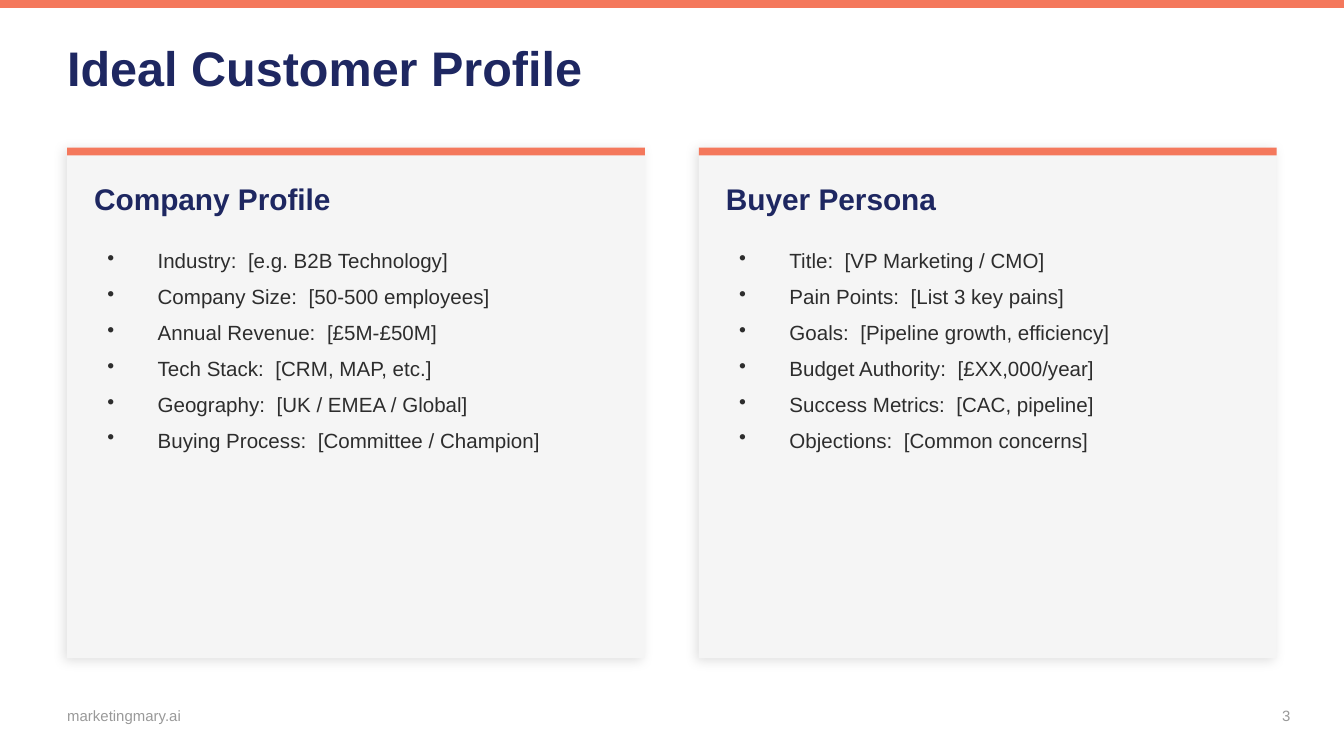
"""Build the Ideal Customer Profile slide with its two profile cards."""
from lxml.etree import SubElement
from pptx import Presentation
from pptx.dml.color import RGBColor
from pptx.enum.shapes import MSO_SHAPE
from pptx.enum.text import MSO_ANCHOR, PP_ALIGN
from pptx.oxml.ns import qn
from pptx.util import Cm, Pt

CORAL, NAVY, PANEL, INK, GREY = "F4785C", "1E2761", "F5F5F5", "2D2D2D", "999999"
CARD_TOP, CARD_WIDTH, CARD_HEIGHT = 2.79, 10.92, 9.65
BAR_HEIGHT, PADDING, INDENT = 0.15, 0.51, 0.95
CARDS = [
    (1.27, "Company Profile", [
        ("Industry:", "[e.g. B2B Technology]"),
        ("Company Size:", "[50-500 employees]"),
        ("Annual Revenue:", "[£5M-£50M]"),
        ("Tech Stack:", "[CRM, MAP, etc.]"),
        ("Geography:", "[UK / EMEA / Global]"),
        ("Buying Process:", "[Committee / Champion]"),
    ]),
    (13.21, "Buyer Persona", [
        ("Title:", "[VP Marketing / CMO]"),
        ("Pain Points:", "[List 3 key pains]"),
        ("Goals:", "[Pipeline growth, efficiency]"),
        ("Budget Authority:", "[£XX,000/year]"),
        ("Success Metrics:", "[CAC, pipeline]"),
        ("Objections:", "[Common concerns]"),
    ]),
]


def colour(value):
    return RGBColor.from_string(value)


def add_span(para, words, size, shade, bold=False):
    span = para.add_run()
    span.text = words
    span.font.name = "Arial"
    span.font.size = Pt(size)
    span.font.bold = bold
    span.font.color.rgb = colour(shade)
    return span


deck = Presentation()
deck.slide_width, deck.slide_height = Cm(25.4), Cm(14.29)
page = deck.slides.add_slide(deck.slide_layouts[6])
page.background.fill.solid()
page.background.fill.fore_color.rgb = colour("FFFFFF")

blocks = [(0, 0, 25.4, BAR_HEIGHT, CORAL)]
for left, heading, facts in CARDS:
    blocks.append((left, CARD_TOP, CARD_WIDTH, CARD_HEIGHT, PANEL))
    blocks.append((left, CARD_TOP, CARD_WIDTH, BAR_HEIGHT, CORAL))

for left, top, width, height, shade in blocks:
    block = page.shapes.add_shape(
        MSO_SHAPE.RECTANGLE, Cm(left), Cm(top), Cm(width), Cm(height))
    block.fill.solid()
    block.fill.fore_color.rgb = colour(shade)
    block.line.fill.background()
    block.shadow.inherit = False
    if shade == PANEL:
        effects = block._element.spPr.find(qn("a:effectLst"))
        shadow = SubElement(
            effects, qn("a:outerShdw"), blurRad=str(Pt(6)), dist=str(Pt(2)),
            dir=str(135 * 60000), algn="bl", rotWithShape="0")
        tint = SubElement(shadow, qn("a:srgbClr"), val="000000")
        SubElement(tint, qn("a:alpha"), val="12000")

labels = [(1.27, 0.51, 22.86, 1.52, "Ideal Customer Profile", 26, NAVY, PP_ALIGN.LEFT)]
for left, heading, facts in CARDS:
    labels.append((left + PADDING, 3.18, 9.91, 1.14, heading, 16, NAVY, PP_ALIGN.LEFT))
labels.append((1.02, 13.08, 5.08, 0.89, "marketingmary.ai", 8, GREY, PP_ALIGN.LEFT))
labels.append((23.37, 13.08, 1.27, 0.89, "3", 8, GREY, PP_ALIGN.RIGHT))

for left, top, width, height, words, size, shade, align in labels:
    box = page.shapes.add_textbox(Cm(left), Cm(top), Cm(width), Cm(height))
    frame = box.text_frame
    frame.word_wrap = True
    frame.vertical_anchor = MSO_ANCHOR.MIDDLE
    if shade == NAVY:
        frame.margin_left = frame.margin_right = 0
        frame.margin_top = frame.margin_bottom = 0
    para = frame.paragraphs[0]
    para.alignment = align
    add_span(para, words, size, shade, bold=shade == NAVY)

for left, heading, facts in CARDS:
    box = page.shapes.add_textbox(Cm(left + PADDING), Cm(4.57), Cm(9.91), Cm(7.37))
    frame = box.text_frame
    frame.word_wrap = True
    for index, (label, value) in enumerate(facts):
        para = frame.add_paragraph() if index else frame.paragraphs[0]
        para.space_after = Pt(6)
        settings = para._p.get_or_add_pPr()
        settings.set("marL", str(Cm(INDENT)))
        settings.set("indent", str(-Cm(INDENT)))
        SubElement(settings, qn("a:buChar"), char="•")
        add_span(para, label, 11, INK)
        gap = add_span(para, " ", 11, INK)
        gap.font._element.set("spc", "300")
        add_span(para, value, 11, INK)

deck.save("out.pptx")
